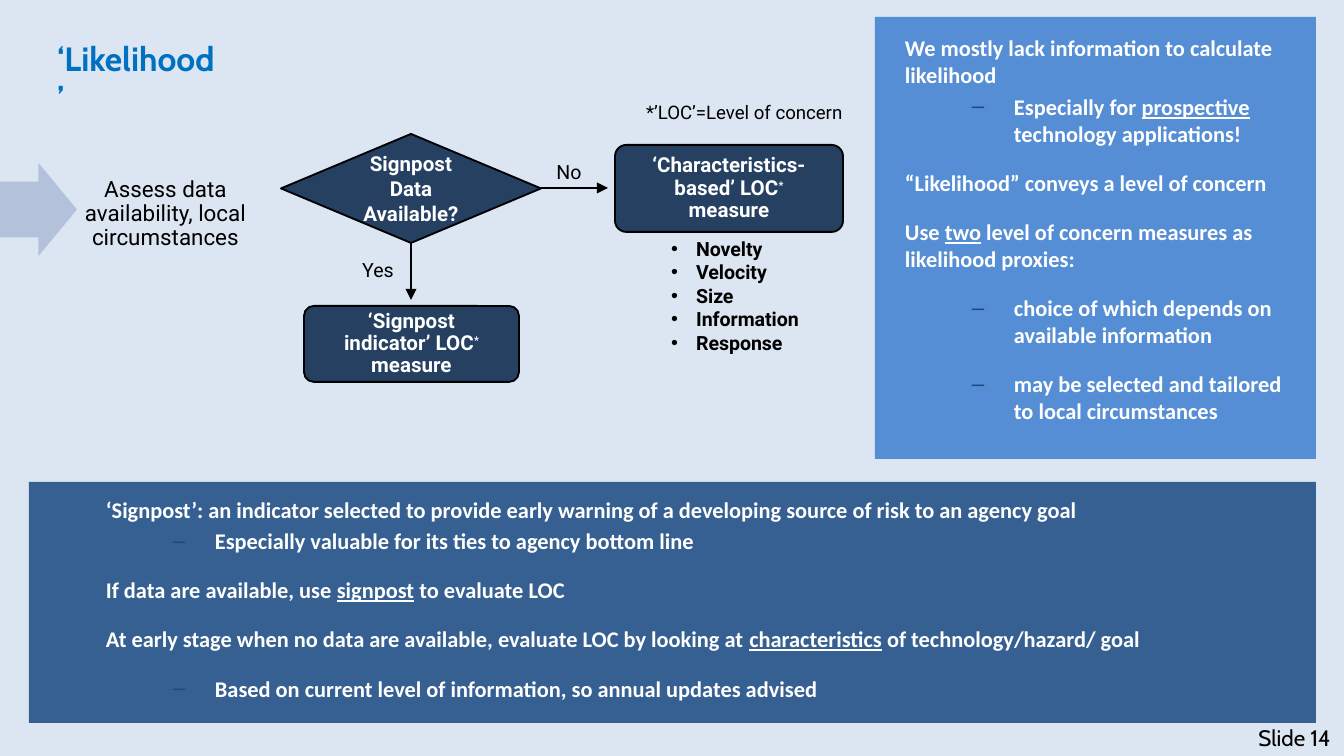
from lxml import etree
from pptx import Presentation
from pptx.dml.color import RGBColor
from pptx.enum.shapes import MSO_CONNECTOR, MSO_SHAPE
from pptx.enum.text import MSO_ANCHOR, MSO_AUTO_SIZE, PP_ALIGN
from pptx.oxml.ns import qn
from pptx.util import Emu, Pt

LEFT, CENTER, RIGHT = PP_ALIGN.LEFT, PP_ALIGN.CENTER, PP_ALIGN.RIGHT
TOP, MIDDLE = MSO_ANCHOR.TOP, MSO_ANCHOR.MIDDLE
RECTANGLE, ROUNDED = MSO_SHAPE.RECTANGLE, MSO_SHAPE.ROUNDED_RECTANGLE
DIAMOND, ARROW = MSO_SHAPE.DIAMOND, MSO_SHAPE.RIGHT_ARROW
STRAIGHT = MSO_CONNECTOR.STRAIGHT
NO_AUTOSIZE = MSO_AUTO_SIZE.NONE

EMU_PER_PX = 914400 / 134.4
BLACK, WHITE, NAVY = "000000", "FFFFFF", "254061"
BULLET_BLUE = "1F497D"

FACTORS = ["Novelty", "Velocity", "Size", "Information", "Response"]
CONCERN_POINTS = [
    (0, 12, "We mostly lack information to calculate likelihood"),
    (1, 2.4, "Especially for |prospective| technology applications!"),
    (0, 12, "“Likelihood” conveys a level of concern"),
    (0, 12, "Use |two| level of concern measures as likelihood proxies:"),
    (1, 12, "choice of which depends on available information"),
    (1, 12, "may be selected and tailored to local circumstances"),
]
SIGNPOST_POINTS = [
    (0, 12, "‘Signpost’: an indicator selected to provide early warning of a "
            "developing source of risk to an agency goal"),
    (1, 2.4, "Especially valuable for its ties to agency bottom line"),
    (0, 12, "If data are available, use |signpost| to evaluate LOC"),
    (0, 12, "At early stage when no data are available, evaluate LOC by looking at "
            "|characteristics| of technology/hazard/ goal"),
    (1, 12, "Based on current level of information, so annual updates advised"),
]


def px(value):
    """Turn pixels into EMU."""
    return Emu(round(value * EMU_PER_PX))


def color(value):
    """Turn a hex string into a colour."""
    return RGBColor.from_string(value)


def underline(run):
    """Underline a run."""
    run.font.underline = True


def superscript(run):
    """Raise a run and make it slightly smaller."""
    run.font.size = Pt(10)
    run.font._element.set("baseline", "30000")


def write(paragraph, text, size, hex_color=BLACK, font="Roboto", bold=False,
          align=LEFT, mark=underline):
    """Fill a paragraph, marking the parts that stand between bars."""
    for index, part in enumerate(text.split("|")):
        run = paragraph.add_run()
        run.text = part
        if index % 2:
            mark(run)
    paragraph.alignment = align
    paragraph.font.size, paragraph.font.name = Pt(size), font
    paragraph.font.bold = bold
    paragraph.font.color.rgb = color(hex_color)


def add_bullet(paragraph, character, margin, hanging, hex_color):
    """Give a paragraph a coloured bullet with a hanging indent."""
    properties = paragraph._p.get_or_add_pPr()
    properties.set("marL", str(px(margin)))
    properties.set("indent", str(-px(hanging)))
    bullet_color = etree.SubElement(properties, qn("a:buClr"))
    etree.SubElement(bullet_color, qn("a:srgbClr"), val=hex_color)
    etree.SubElement(properties, qn("a:buFont"), typeface="Arial")
    etree.SubElement(properties, qn("a:buChar"), char=character)


def add_shape(slide, kind, box, fill, outlined=False):
    """Add a flat preset shape."""
    shape = slide.shapes.add_shape(kind, *map(px, box))
    shape.shadow.inherit = False
    shape.fill.solid()
    shape.fill.fore_color.rgb = color(fill)
    if outlined:
        shape.line.color.rgb = color(BLACK)
        shape.line.width = Pt(1)
    else:
        shape.line.fill.background()
    return shape


def add_step(slide, kind, box, text, line_spacing=1.0):
    """Add an outlined flowchart step with centred text."""
    shape = add_shape(slide, kind, box, NAVY, outlined=True)
    if kind == ROUNDED:
        shape.adjustments[0] = 0.13
        set_insets(shape.text_frame, 19)
    shape.text_frame.word_wrap = True
    shape.text_frame.vertical_anchor = MIDDLE
    paragraph = shape.text_frame.paragraphs[0]
    write(paragraph, text, 11, WHITE, bold=True, align=CENTER, mark=superscript)
    paragraph.line_spacing = line_spacing


def set_insets(frame, inset):
    """Set all four insets of a text frame."""
    frame.margin_left = frame.margin_right = px(inset)
    frame.margin_top = frame.margin_bottom = px(inset)


def add_frame(slide, box):
    """Add a wrapping text box and return its frame."""
    frame = slide.shapes.add_textbox(*map(px, box)).text_frame
    frame.word_wrap = True
    return frame


def add_label(slide, box, text, size, **style):
    """Add a text box of one paragraph."""
    frame = add_frame(slide, box)
    write(frame.paragraphs[0], text, size, **style)
    return frame


def add_paragraphs(frame, count):
    """Return the given number of paragraphs of an empty frame."""
    return [frame.paragraphs[0]] + [frame.add_paragraph() for _ in range(count - 1)]


def add_points(slide, box, left_inset, points):
    """Add a text box of statements with dashed sub-points."""
    frame = add_frame(slide, box)
    frame.margin_left = px(left_inset)
    for paragraph, (level, space, text) in zip(add_paragraphs(frame, len(points)), points):
        write(paragraph, text, 12, WHITE, "Calibri", bold=True)
        paragraph.space_before = Pt(space)
        paragraph.level = level
        if level:
            add_bullet(paragraph, "–", 109, 42, BULLET_BLUE)


def add_factors(slide, box):
    """Add the bulleted list of characteristics."""
    paragraphs = add_paragraphs(add_frame(slide, box), len(FACTORS))
    for paragraph, factor in zip(paragraphs, FACTORS):
        write(paragraph, factor, 10.5, bold=True)
        add_bullet(paragraph, "•", 25, 25, BLACK)


def add_arrow(slide, *ends):
    """Add a black line with an arrowhead at its end."""
    connector = slide.shapes.add_connector(STRAIGHT, *map(px, ends))
    connector.line.color.rgb = color(BLACK)
    connector.line.width = Pt(1.5)
    etree.SubElement(connector.line._get_or_add_ln(), qn("a:tailEnd"), type="triangle")
    etree.SubElement(connector._element.spPr, qn("a:effectLst"))


def set_title(slide, box, text):
    """Place and format the title placeholder."""
    title = slide.shapes.title
    title.left, title.top, title.width, title.height = map(px, box)
    frame = title.text_frame
    frame.word_wrap = False
    frame.auto_size = NO_AUTOSIZE
    frame.vertical_anchor = TOP
    write(frame.paragraphs[0], text, 18, "0070C0", "Cabin", bold=True)


def main():
    """Build the slide and save it."""
    presentation = Presentation()
    presentation.slide_width, presentation.slide_height = px(1344), px(756)
    slide = presentation.slides.add_slide(presentation.slide_layouts[5])
    slide.background.fill.solid()
    slide.background.fill.fore_color.rgb = color("DCE6F2")

    set_title(slide, (44, 31, 190, 54), "‘Likelihood’")
    add_label(slide, (735, 718, 609, 40), "Slide 14", 12, font="Cabin", align=RIGHT)
    add_shape(slide, RECTANGLE, (875, 17, 441, 442), "558ED5")
    add_shape(slide, RECTANGLE, (29, 482, 1287, 241), "376092")
    arrow = add_shape(slide, ARROW, (0, 163, 77, 93), "B3C1DB")
    arrow.adjustments[0] = 0.6

    add_step(slide, ROUNDED, (304, 306, 215, 76), "‘Signpost indicator’ LOC|*| measure", 0.9)
    add_step(slide, ROUNDED, (615, 145, 228, 87), "‘Characteristics-based’ LOC|* |measure", 0.9)
    add_step(slide, DIAMOND, (281, 134, 260, 109), "Signpost Data Available?")
    add_arrow(slide, 411, 243, 411, 300)
    add_arrow(slide, 541, 188, 608, 188)
    add_label(slide, (633, 94, 227, 36), "*’LOC’=Level of concern", 10)
    add_label(slide, (349, 251, 77, 39), "Yes", 10.5)
    add_label(slide, (496, 153, 146, 39), "No", 10.5, align=CENTER)
    intro = add_label(slide, (44, 165, 243, 98),
                      "Assess data availability, local circumstances", 12, align=CENTER)
    set_insets(intro, 19)
    intro.vertical_anchor = MIDDLE
    intro.paragraphs[0].line_spacing = 0.9

    add_factors(slide, (658, 230, 165, 132))
    add_points(slide, (-100, 489, 1444, 230), 206, SIGNPOST_POINTS)
    add_points(slide, (882, 28, 423, 354), 23, CONCERN_POINTS)
    presentation.save("out.pptx")


if __name__ == "__main__":
    main()
